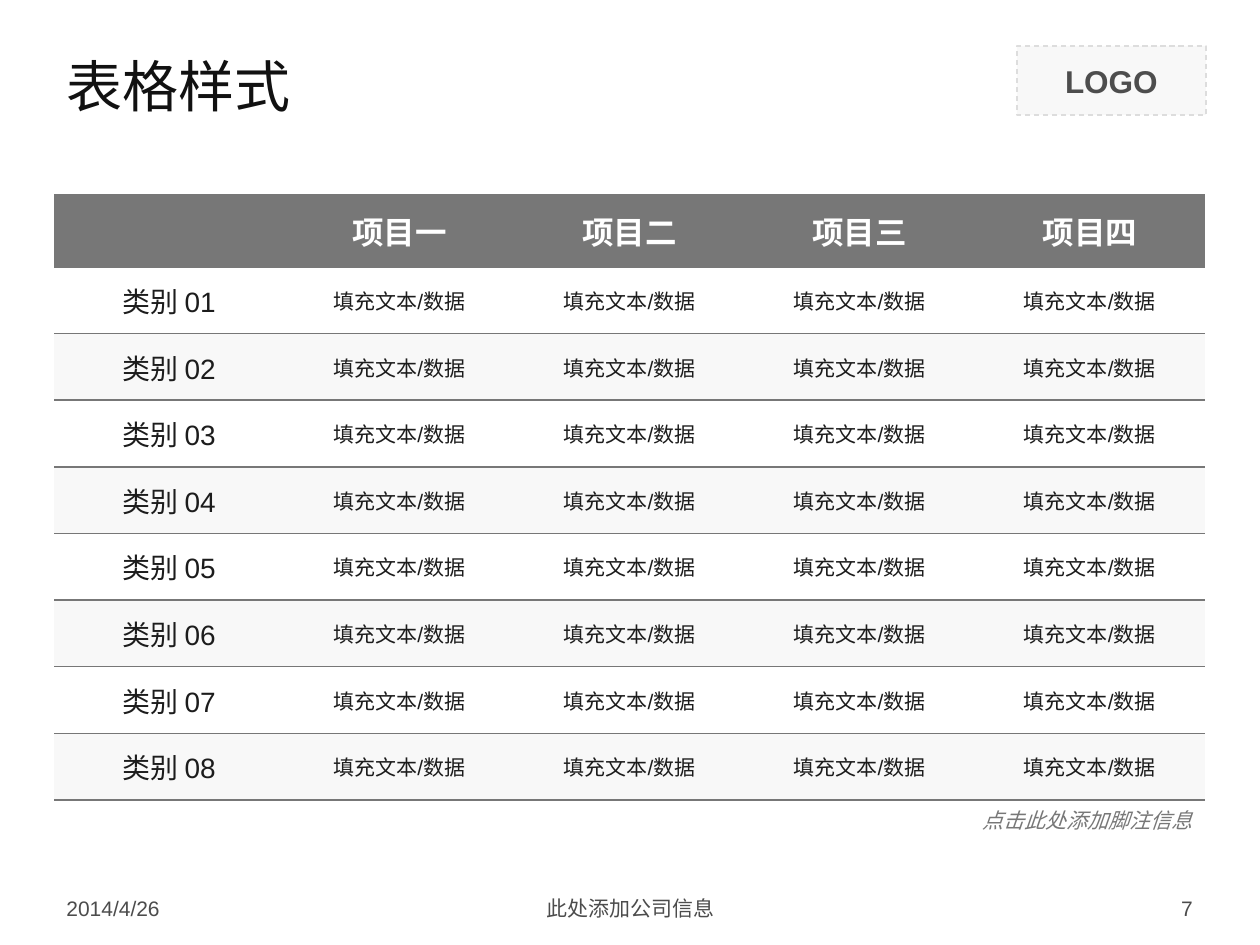
from lxml.etree import SubElement
from pptx import Presentation
from pptx.dml.color import RGBColor
from pptx.enum.dml import MSO_LINE
from pptx.enum.shapes import MSO_SHAPE
from pptx.enum.text import MSO_ANCHOR, MSO_AUTO_SIZE, PP_ALIGN
from pptx.oxml.ns import qn
from pptx.util import Emu, Pt

PX = 914400 / 126
WHITE = RGBColor(0xFF, 0xFF, 0xFF)
PALE = RGBColor(0xF8, 0xF8, 0xF8)
DASH = RGBColor(0xDD, 0xDD, 0xDD)
GREY = RGBColor(0x77, 0x77, 0x77)
DARK = RGBColor(0x4D, 0x4D, 0x4D)
FOOTER = RGBColor(0x4C, 0x4C, 0x4C)
INK = RGBColor(0x1C, 0x1C, 0x1C)
TITLE = RGBColor(0x11, 0x11, 0x11)


def box(*lengths):
    return [Emu(round(n * PX)) for n in lengths]


def write(tf, text, size, color, align=PP_ALIGN.CENTER, **font):
    p = tf.paragraphs[0]
    p.alignment = align
    r = p.add_run()
    r.text = text
    r.font.color.rgb = color
    for name, value in {"name": "Arial", "size": Pt(size), **font}.items():
        setattr(r.font, name, value)


prs = Presentation()
prs.slide_width, prs.slide_height = box(1260, 945)
s = prs.slides.add_slide(prs.slide_layouts[5])

# Logo frame
sp = s.shapes.add_shape(MSO_SHAPE.RECTANGLE, *box(1017, 46, 189, 69))
sp.shadow.inherit = False
sp.fill.solid()
sp.fill.fore_color.rgb = PALE
sp.line.color.rgb = DASH
sp.line.width = Pt(0.75)
sp.line.dash_style = MSO_LINE.DASH
sp.text_frame.vertical_anchor = MSO_ANCHOR.MIDDLE
write(sp.text_frame, "LOGO", 18, DARK, bold=True)

# Title
title = s.shapes.title
title.left, title.top, title.width, title.height = box(54, 35, 1152, 100)
title.text_frame.vertical_anchor = MSO_ANCHOR.MIDDLE
write(title.text_frame, "表格样式", 32, TITLE, PP_ALIGN.LEFT, name="Montserrat")

# Table contents
rows = [["", "项目一", "项目二", "项目三", "项目四"]]
rows += [[f"类别 {n:02}"] + ["填充文本/数据"] * 4 for n in range(1, 9)]
bounds = box(54, 195, 1151, 605)
table = s.shapes.add_table(len(rows), len(rows[0]), *bounds).table
table.horz_banding = False
for col in table.columns:
    col.width = Emu(bounds[2] // len(rows[0]))
header_height = box(72)[0]
for i, row in enumerate(table.rows):
    row.height = Emu((bounds[3] - header_height) // 8) if i else header_height

# Table cells: horizontal rules only, alternate rows tinted
for i, row in enumerate(rows):
    for j, text in enumerate(row):
        cell = table.cell(i, j)
        cell.vertical_anchor = MSO_ANCHOR.MIDDLE
        tcPr = cell._tc.get_or_add_tcPr()
        for side in "LR":
            SubElement(SubElement(tcPr, qn(f"a:ln{side}")), qn("a:noFill"))
        for side in "TB":
            ln = SubElement(tcPr, qn(f"a:ln{side}"), w=str(Pt(1)))
            SubElement(SubElement(ln, qn("a:solidFill")), qn("a:srgbClr"), val=str(GREY))
        cell.fill.solid()
        cell.fill.fore_color.rgb = GREY if i == 0 else WHITE if i % 2 else PALE
        if text:
            size = 18 if i == 0 else 12 if j else 16
            write(cell.text_frame, text, size, INK if i else WHITE, bold=i == 0)

# Date, company line and page number
for text, left, width, align in [
    ("2014/4/26", 54, 294, PP_ALIGN.LEFT),
    ("此处添加公司信息", 431, 399, PP_ALIGN.CENTER),
    ("7", 911, 294, PP_ALIGN.RIGHT),
]:
    tf = s.shapes.add_textbox(*box(left, 890, width, 37)).text_frame
    tf.word_wrap = True
    tf.vertical_anchor = MSO_ANCHOR.MIDDLE
    write(tf, text, 12, FOOTER, align)

# Footnote
tf = s.shapes.add_textbox(*box(968, 801, 237, 38)).text_frame
tf.word_wrap = False
tf.auto_size = MSO_AUTO_SIZE.SHAPE_TO_FIT_TEXT
write(tf, "点击此处添加脚注信息", 12, GREY, PP_ALIGN.RIGHT, italic=True)

prs.save("out.pptx")
